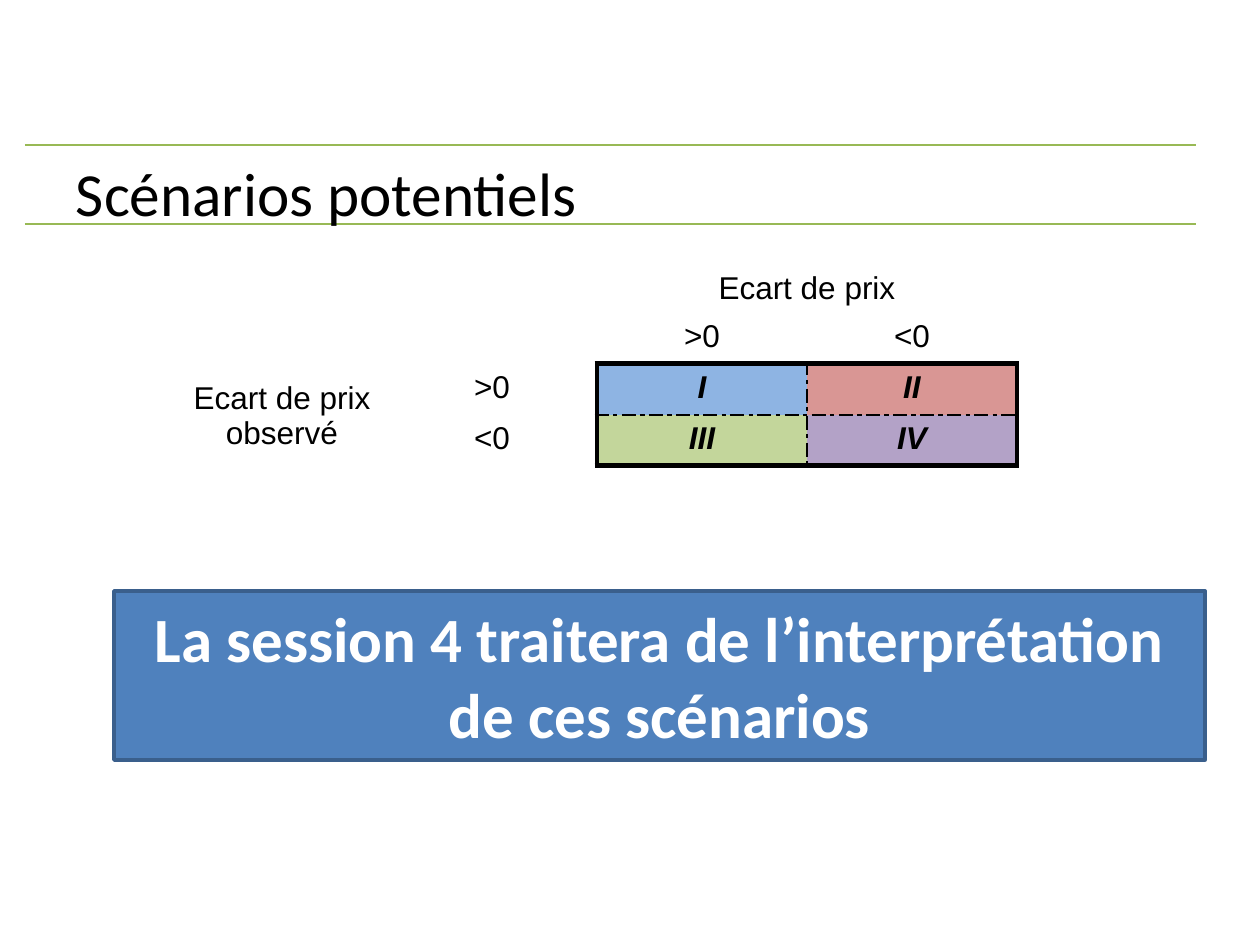
from dataclasses import dataclass

from lxml.etree import SubElement
from pptx import Presentation
from pptx.dml.color import RGBColor
from pptx.enum.shapes import MSO_CONNECTOR, MSO_SHAPE
from pptx.enum.text import MSO_ANCHOR, PP_ALIGN
from pptx.oxml.ns import qn
from pptx.util import Emu, Pt

PX_PER_INCH = 126


@dataclass(frozen=True)
class Theme:
    heading_font: str = "Calibri"
    table_font: str = "Arial"
    title_size: int = 35
    table_size: int = 18
    callout_size: int = 36
    text: str = "000000"
    rule: str = "98B955"
    callout_fill: str = "4F81BD"
    callout_line: str = "3A5F8C"
    callout_text: str = "FFFFFF"


THEME = Theme()

LABELS = {
    (0, 2): "Ecart de prix",
    (1, 2): ">0",
    (1, 3): "<0",
    (2, 0): "Ecart de prix observé",
    (2, 1): ">0",
    (3, 1): "<0",
}
SCENARIOS = {
    (2, 2): ("I", "8EB4E3"),
    (2, 3): ("II", "D99694"),
    (3, 2): ("III", "C3D69B"),
    (3, 3): ("IV", "B3A2C7"),
}
MERGES = [((0, 0), (1, 1)), ((0, 2), (0, 3)), ((2, 0), (3, 0))]
SIDES = {"lnL": (0, -1), "lnR": (0, 1), "lnT": (-1, 0), "lnB": (1, 0)}


def px(length):
    return Emu(round(length * 914400 / PX_PER_INCH))


def px_box(box):
    return [px(length) for length in box]


def set_all(target, values):
    for name, value in values.items():
        setattr(target, name, value)


def write(text_frame, text, alignment, color, **font_values):
    paragraph = text_frame.paragraphs[0]
    paragraph.alignment = alignment
    run = paragraph.add_run()
    run.text = text
    set_all(run.font, font_values)
    run.font.color.rgb = RGBColor.from_string(color)


def add_rule(slide, left, right, y):
    rule = slide.shapes.add_connector(
        MSO_CONNECTOR.STRAIGHT, px(left), px(y), px(right), px(y))
    rule.line.color.rgb = RGBColor.from_string(THEME.rule)
    rule.line.width = Pt(0.75)
    SubElement(rule._element.spPr, qn("a:effectLst"))


def add_title_band(slide, box, text):
    """Two full-width rules with the title between them."""
    left, top, width, height = box
    for y in (top, top + height):
        add_rule(slide, left, left + width, y)
    title = slide.shapes.add_textbox(
        *px_box((left + 38, top + 2, width - 38, height - 2)))
    set_all(title.text_frame, {
        "word_wrap": True,
        "vertical_anchor": MSO_ANCHOR.TOP,
        "margin_left": px(13),
        "margin_top": px(8),
        "margin_bottom": 0,
    })
    write(title.text_frame, text, PP_ALIGN.LEFT, THEME.text,
          name=THEME.heading_font, size=Pt(THEME.title_size))


def set_borders(cell, position):
    """Solid around the scenario block, dashed inside it, none elsewhere."""
    row, column = position
    properties = cell._tc.get_or_add_tcPr()
    for side, (down, across) in SIDES.items():
        neighbour = (row + down, column + across)
        scenario_count = (position in SCENARIOS) + (neighbour in SCENARIOS)
        if not scenario_count:
            SubElement(SubElement(properties, qn(f"a:{side}"), w="0"),
                       qn("a:noFill"))
            continue
        width, dash = (Pt(3), "solid") if scenario_count == 1 else (
            Pt(1.5), "sysDashDot")
        line = SubElement(properties, qn(f"a:{side}"), w=str(width))
        fill = SubElement(line, qn("a:solidFill"))
        SubElement(fill, qn("a:srgbClr"), val=THEME.text)
        SubElement(line, qn("a:prstDash"), val=dash)


def fill_cell(cell, position):
    text, color = SCENARIOS.get(position, (LABELS.get(position), None))
    set_borders(cell, position)
    if color:
        cell.fill.solid()
        cell.fill.fore_color.rgb = RGBColor.from_string(color)
    else:
        cell.fill.background()
    set_all(cell, {
        "margin_top": px(6 if text else 0),
        "margin_bottom": px(4 if text else 0),
        "vertical_anchor":
            MSO_ANCHOR.MIDDLE if position == (2, 0) else MSO_ANCHOR.TOP,
    })
    if text:
        emphasis = position in SCENARIOS
        write(cell.text_frame, text, PP_ALIGN.CENTER, THEME.text,
              name=THEME.table_font, size=Pt(THEME.table_size),
              bold=emphasis, italic=emphasis)


def add_scenario_table(slide, box):
    left, top, width, height = box
    table = slide.shapes.add_table(4, 4, *px_box(box)).table
    set_all(table, {"first_row": False, "horz_banding": False})
    for column in table.columns:
        column.width = px(width / 4)
    body_height = 51
    for index, row in enumerate(table.rows):
        row.height = px(body_height if index else height - 3 * body_height)
    for start, end in MERGES:
        table.cell(*start).merge(table.cell(*end))
    for row in range(4):
        for column in range(4):
            fill_cell(table.cell(row, column), (row, column))


def add_callout(slide, box, text):
    callout = slide.shapes.add_shape(MSO_SHAPE.RECTANGLE, *px_box(box))
    callout.shadow.inherit = False
    callout.fill.solid()
    callout.fill.fore_color.rgb = RGBColor.from_string(THEME.callout_fill)
    callout.line.color.rgb = RGBColor.from_string(THEME.callout_line)
    callout.line.width = Pt(2)
    set_all(callout.text_frame, {
        "word_wrap": True, "vertical_anchor": MSO_ANCHOR.MIDDLE})
    write(callout.text_frame, text, PP_ALIGN.CENTER, THEME.callout_text,
          name=THEME.heading_font, size=Pt(THEME.callout_size), bold=True)


def main():
    presentation = Presentation()
    set_all(presentation, {"slide_width": px(1260), "slide_height": px(945)})
    slide = presentation.slides.add_slide(presentation.slide_layouts[6])
    add_title_band(slide, (25, 145, 1171, 79), "Scénarios potentiels")
    add_scenario_table(slide, (177, 265, 840, 200))
    add_callout(slide, (114, 591, 1091, 169),
                "La session 4 traitera de l’interprétation de ces scénarios")
    presentation.save("out.pptx")


if __name__ == "__main__":
    main()
